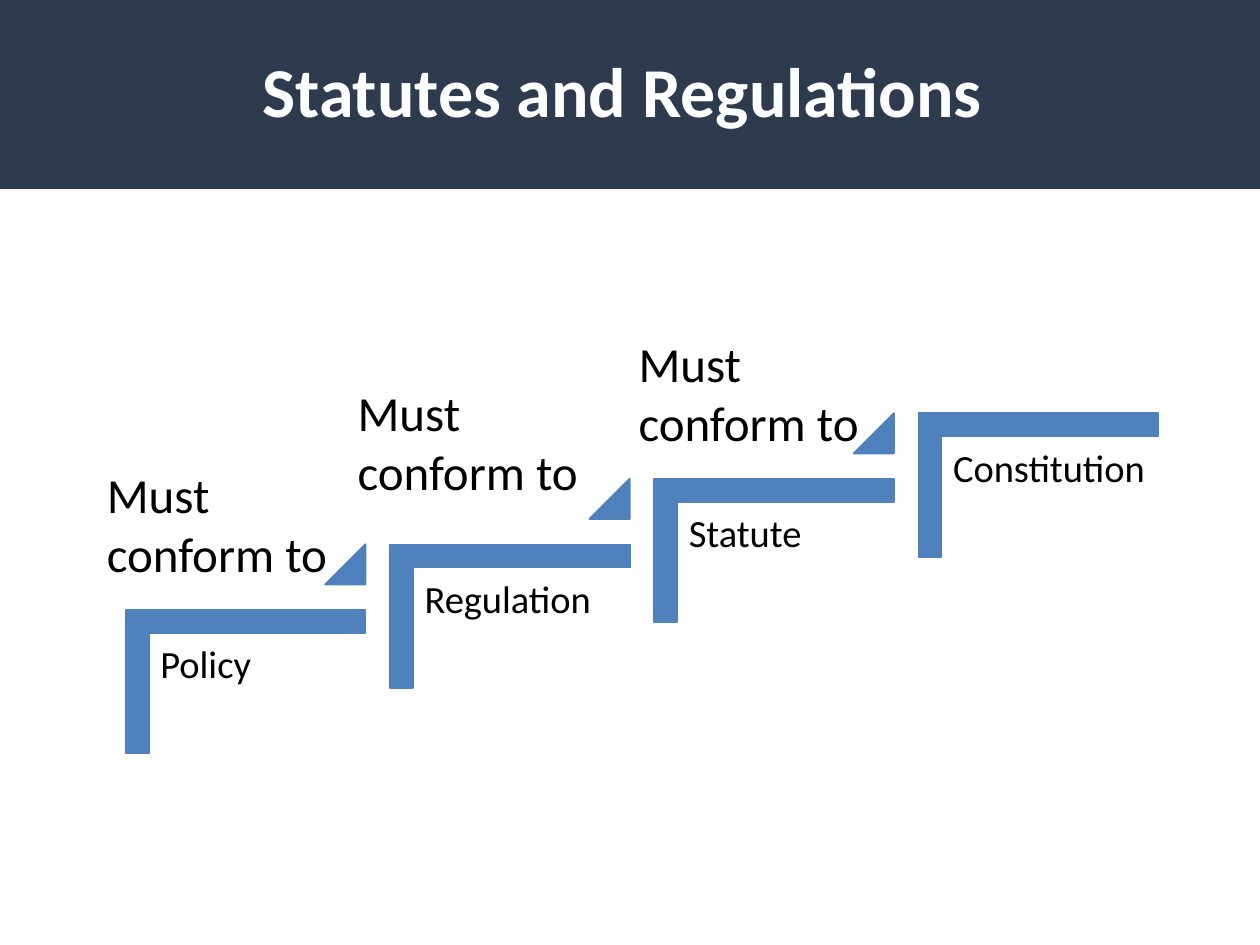
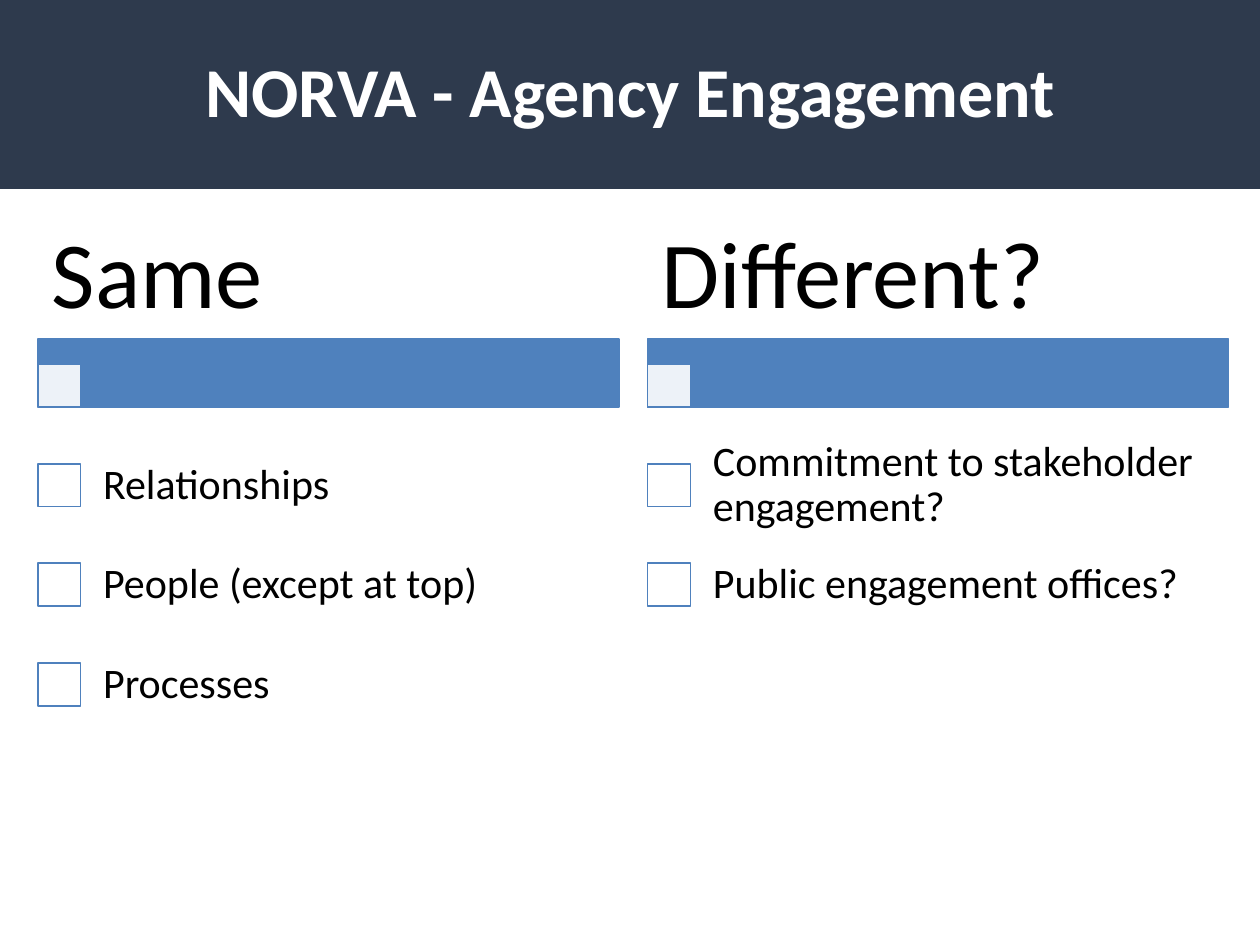
from lxml import etree
from pptx import Presentation
from pptx.dml.color import RGBColor as RGB
from pptx.enum.shapes import MSO_SHAPE as SHAPE
from pptx.enum.text import MSO_ANCHOR as ANCHOR, PP_ALIGN as ALIGN
from pptx.oxml.ns import qn
from pptx.util import Pt

COLORS = {"band": "2E3A4D", "accent": "4F81BD", "white": "FFFFFF", "text": "000000"}
FONT = "Calibri"
SLIDE_W, SLIDE_H, BAND_H = 720, 540, 108


class Deck:
    """Holds the shared style and the current slide."""

    def __init__(self):
        self.prs = Presentation()
        self.prs.slide_width, self.prs.slide_height = Pt(SLIDE_W), Pt(SLIDE_H)
        self.s = None

    def slide(self, title):
        self.s = self.prs.slides.add_slide(self.prs.slide_layouts[6])
        band = self.shape(SHAPE.RECTANGLE, 0, 0, SLIDE_W, BAND_H, "band", line=None)
        self.set_text(band, title, 40, "white", ANCHOR.MIDDLE, (7.2, 3.6), 0.9)
        p = band.text_frame.paragraphs[0]
        p.alignment, p.font.bold = ALIGN.CENTER, True

    def shape(self, kind, x, y, w, h, fill="accent", line="accent", adj=(), opacity=None):
        sp = self.s.shapes.add_shape(kind, Pt(x), Pt(y), Pt(w), Pt(h))
        sp.shadow.inherit = False
        sp.fill.solid()
        sp.fill.fore_color.rgb = RGB.from_string(COLORS[fill])
        if opacity is not None:
            color = sp.element.spPr.find(qn("a:solidFill"))[0]
            etree.SubElement(color, qn("a:alpha")).set("val", str(opacity * 1000))
        if line:
            sp.line.color.rgb = RGB.from_string(COLORS[line])
            sp.line.width = Pt(1)
        else:
            sp.line.fill.background()
        for i, value in enumerate(adj):
            sp.adjustments[i] = value
        return sp

    def text(self, x, y, w, h, text, size, anchor=ANCHOR.TOP, inset=(7.2, 3.6), spacing=0.9):
        sp = self.s.shapes.add_textbox(Pt(x), Pt(y), Pt(w), Pt(h))
        self.set_text(sp, text, size, "text", anchor, inset, spacing)

    def set_text(self, sp, text, size, color, anchor, inset, spacing):
        tf = sp.text_frame
        tf.word_wrap, tf.vertical_anchor = True, anchor
        tf.margin_left = tf.margin_right = Pt(inset[0])
        tf.margin_top = tf.margin_bottom = Pt(inset[1])
        p = tf.paragraphs[0]
        p.text, p.line_spacing = text, spacing
        p.font.name, p.font.size = FONT, Pt(size)
        p.font.color.rgb = RGB.from_string(COLORS[color])


def statutes(deck):
    deck.slide("Statutes and Regulations ")

    # Rising steps, with a triangle before each next step
    steps = ["Policy", "Regulation", "Statute", "Constitution"]
    for i, step in enumerate(steps):
        x, y = 85 + 151 * i, 321 - 37.44 * i
        corner = deck.shape(SHAPE.CORNER, x + 14.3, y, 82, 137, adj=(0.161, 0.161))
        corner.rotation = 90
        deck.text(x, y + 41.2, 123, 108, step, 22, inset=(6.6, 6.6))
        if i < len(steps) - 1:
            deck.shape(SHAPE.ISOSCELES_TRIANGLE, x + 100.8, y - 10, 23, 23, adj=(1,))

    # Captions above the steps
    for x, y in [(54, 262), (197.3, 215.3), (357.8, 187.2)]:
        deck.text(x, y, 143.3, 75, "Must conform to", 28, spacing=1.0)


def engagement(deck):
    deck.slide("NORVA - Agency Engagement")
    columns = {
        "Same": ["Relationships", "People (except at top)", "Processes"],
        "Different?": ["Commitment to stakeholder engagement?", "Public engagement offices?"],
    }
    box = 24.5
    for i, (heading, items) in enumerate(columns.items()):
        x = 21.6 + 348.5 * i

        # Heading and bar
        deck.shape(SHAPE.RECTANGLE, x, 193.7, 332, 39)
        deck.shape(SHAPE.RECTANGLE, x, 208.2, box, box, "white", opacity=90)
        deck.text(x, 124, 332, 70, heading, 54, ANCHOR.MIDDLE, (8, 5))

        # Check list
        for j, item in enumerate(items):
            y = 249 + 56.9 * j
            deck.shape(SHAPE.RECTANGLE, x, y + 16, box, box, "white")
            deck.text(x + 23.8, y, 309, 57, item, 24, ANCHOR.MIDDLE, (13.5, 13.5))


def main():
    deck = Deck()
    statutes(deck)
    engagement(deck)
    deck.prs.save("out.pptx")


if __name__ == "__main__":
    main()
